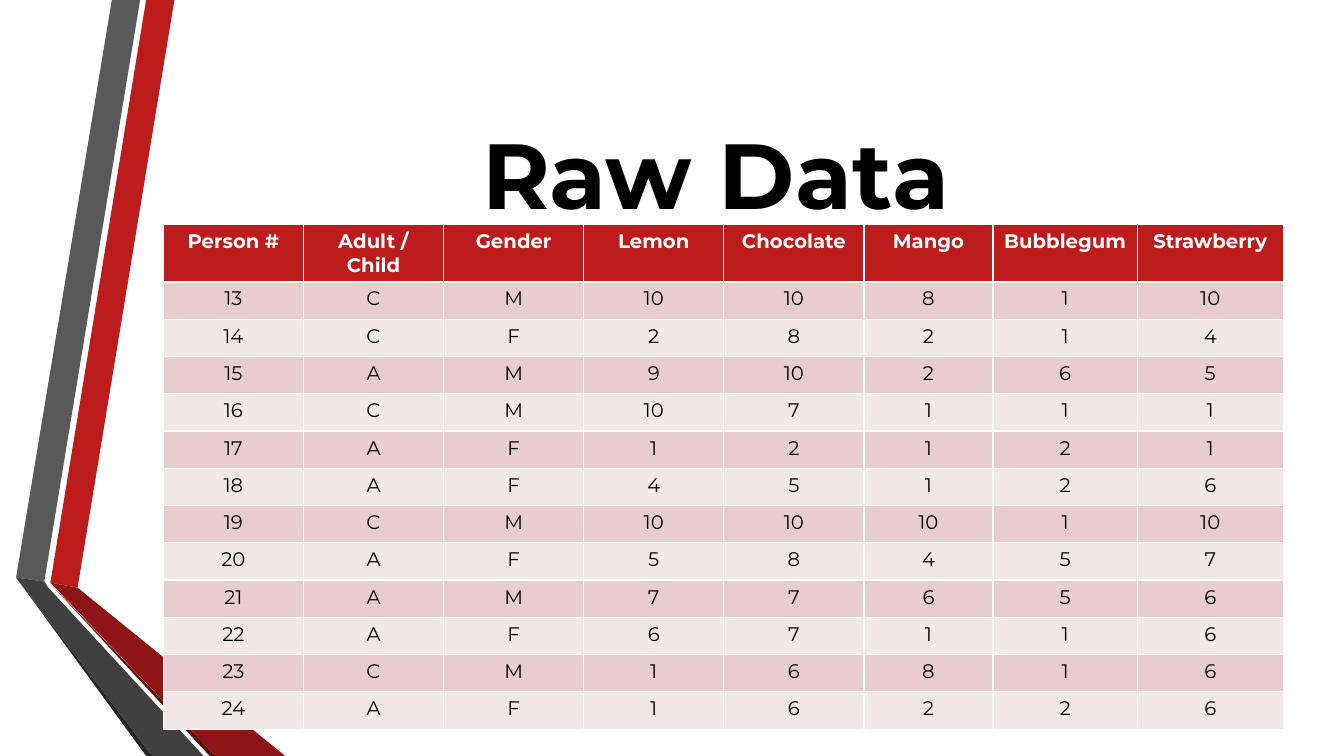
"""Build the Raw Data slide: angled ribbons, a title and a table of flavour scores."""
from pptx import Presentation
from pptx import util as u
from pptx.dml import color
from pptx.enum import text

PX = 9144
FONT = "Montserrat"
HUES = {
    "red": "BC1C1C", "grey": "595959", "black": "262626", "wine": "5E0E0E",
    "dark": "8D1515", "coal": "404040", "odd": "E7CDCD", "even": "F3E8E8",
    "white": "FFFFFF", "ink": "000000",
}
BANDS = [
    ("red", [(50, 578), (77, 583), (173, 0), (145, 0)]),
    ("grey", [(139, 0), (111, 0), (16, 573), (44, 577)]),
    ("black", [(16, 573), (145, 750), (151, 750)]),
    ("wine", [(50, 579), (208, 750), (214, 750)]),
    ("dark", [(50, 578), (214, 750), (283, 750), (77, 583)]),
    ("coal", [(202, 750), (48, 583), (44, 577), (16, 573), (151, 750)]),
]
TITLE = ("Raw Data", (162, 75, 1096, 192))
LEFT, TOP, ROW = 162, 223, 37
COLS = [139, 139, 139, 139, 139, 128, 143, 145]
HEAD = ["Person #", "Adult / Child", "Gender", "Lemon",
        "Chocolate", "Mango", "Bubblegum", "Strawberry"]
FIRST = 13
DATA = [
    ("C", "M", 10, 10, 8, 1, 10),
    ("C", "F", 2, 8, 2, 1, 4),
    ("A", "M", 9, 10, 2, 6, 5),
    ("C", "M", 10, 7, 1, 1, 1),
    ("A", "F", 1, 2, 1, 2, 1),
    ("A", "F", 4, 5, 1, 2, 6),
    ("C", "M", 10, 10, 10, 1, 10),
    ("A", "F", 5, 8, 4, 5, 7),
    ("A", "M", 7, 7, 6, 5, 6),
    ("A", "F", 6, 7, 1, 1, 6),
    ("C", "M", 1, 6, 8, 1, 6),
    ("A", "F", 1, 6, 2, 2, 6),
]


def paint(fill, hue):
    fill.solid()
    fill.fore_color.rgb = color.RGBColor.from_string(HUES[hue])


def write(frame, words, size, hue, bold):
    frame.text = words
    para = frame.paragraphs[0]
    para.alignment = text.PP_ALIGN.CENTER
    for run in para.runs:
        run.font.name = FONT
        run.font.size = u.Pt(size)
        run.font.bold = bold
        run.font.color.rgb = color.RGBColor.from_string(HUES[hue])


def add_band(slide, hue, dots):
    pen = slide.shapes.build_freeform(*dots[0], scale=PX)
    pen.add_line_segments(dots[1:], close=True)
    band = pen.convert_to_shape()
    band.shadow.inherit = False
    paint(band.fill, hue)
    band.line.fill.background()


def add_title(slide, words, area):
    box = slide.shapes.add_textbox(*(n * PX for n in area))
    box.text_frame.word_wrap = True
    box.text_frame.vertical_anchor = text.MSO_ANCHOR.MIDDLE
    write(box.text_frame, words, 66, "ink", True)


def add_scores(slide):
    rows = [HEAD] + [(FIRST + i, *row) for i, row in enumerate(DATA)]
    area = (LEFT, TOP, sum(COLS), ROW * len(rows))
    grid = slide.shapes.add_table(
        len(rows), len(COLS), *(n * PX for n in area)).table
    for col, wide in zip(grid.columns, COLS):
        col.width = wide * PX
    for r, row in enumerate(rows):
        grid.rows[r].height = ROW * PX
        top = r == 0
        hue = "red" if top else "odd" if r % 2 else "even"
        for c, words in enumerate(row):
            cell = grid.cell(r, c)
            paint(cell.fill, hue)
            write(cell.text_frame, str(words), 14,
                  "white" if top else "ink", top)


def main():
    deck = Presentation()
    deck.slide_width, deck.slide_height = 1333 * PX, 750 * PX
    slide = deck.slides.add_slide(deck.slide_layouts[6])
    paint(slide.background.fill, "white")
    for hue, dots in BANDS:
        add_band(slide, hue, dots)
    add_title(slide, *TITLE)
    add_scores(slide)
    deck.save("out.pptx")


if __name__ == "__main__":
    main()
